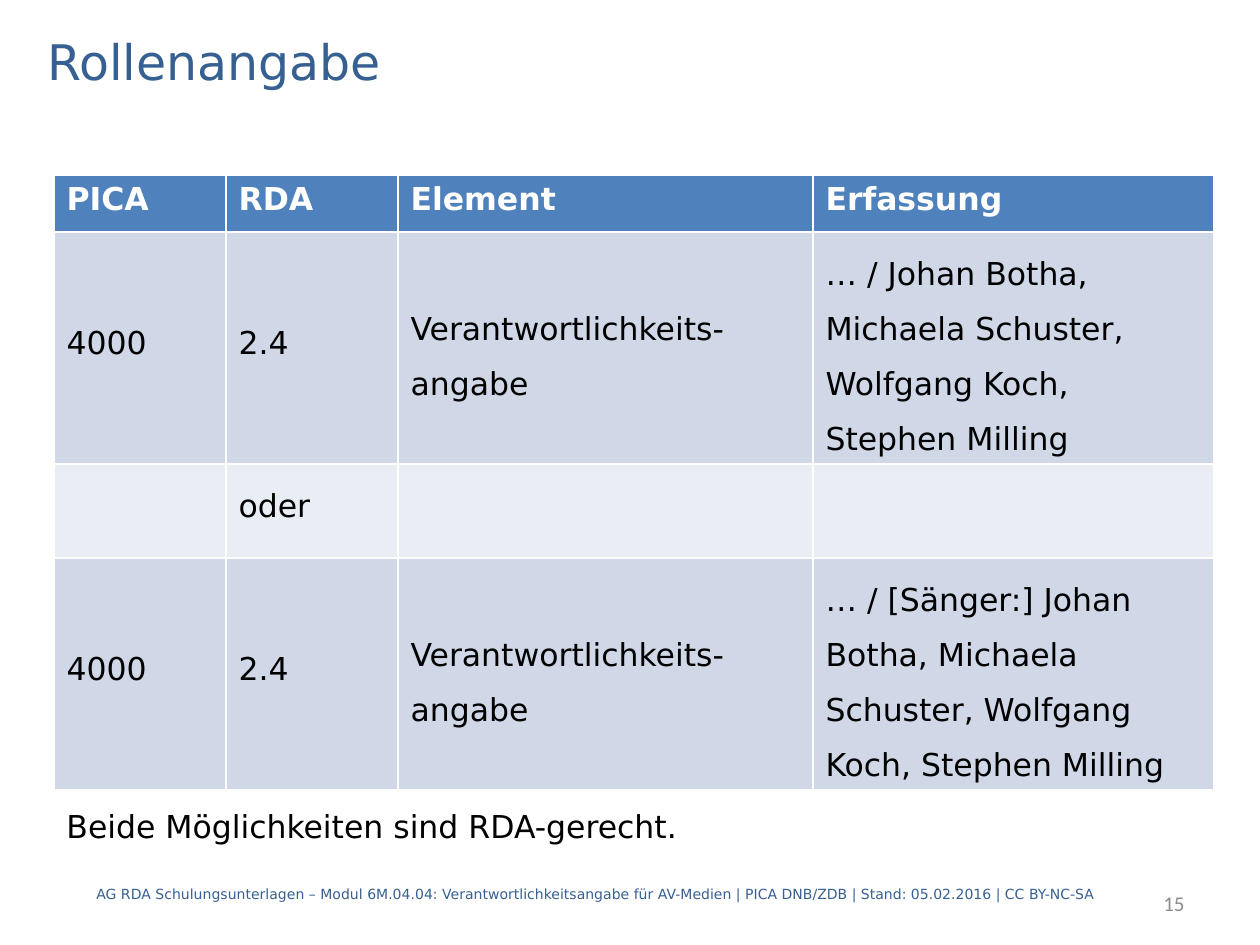
import pptx
import pptx.dml.color
import pptx.enum.text
import pptx.util

PX = 914400 // 126
FONT = "DejaVu Sans"
BLUE = "376092"
LEFT = pptx.enum.text.PP_ALIGN.LEFT
RIGHT = pptx.enum.text.PP_ALIGN.RIGHT
MIDDLE = pptx.enum.text.MSO_ANCHOR.MIDDLE


def color(value):
    return pptx.dml.color.RGBColor.from_string(value)


def write(frame, text, size, ink, font=FONT, align=LEFT):
    """Fill a text frame with one formatted paragraph and return it."""
    frame.word_wrap = True
    frame.text = text
    paragraph = frame.paragraphs[0]
    paragraph.alignment = align
    paragraph.font.name = font
    paragraph.font.size = pptx.util.Pt(size)
    paragraph.font.color.rgb = color(ink)
    return paragraph


presentation = pptx.Presentation()
presentation.slide_width = 1260 * PX
presentation.slide_height = 945 * PX
slide = presentation.slides.add_slide(presentation.slide_layouts[5])

# Title
title = slide.shapes.title
title.left, title.top, title.width, title.height = (n * PX for n in (35, 25, 1191, 71))
title.text_frame.auto_size = pptx.enum.text.MSO_AUTO_SIZE.NONE
title.text_frame.vertical_anchor = MIDDLE
write(title.text_frame, "Rollenangabe", 28, BLUE)

# Table
element = "Verantwortlichkeits-angabe"
rows = [
    ["PICA", "RDA", "Element", "Erfassung"],
    ["4000", "2.4", element,
     "… / Johan Botha, Michaela Schuster, Wolfgang Koch, Stephen Milling"],
    ["", "oder", "", ""],
    ["4000", "2.4", element,
     "… / [Sänger:] Johan Botha, Michaela Schuster, Wolfgang Koch, Stephen Milling"],
]
column_widths = [172, 172, 415, 401]
row_heights = [57, 232, 94, 232]
row_fills = ["4F81BD", "D0D8E8", "E9EDF4", "D0D8E8"]

table = slide.shapes.add_table(
    len(rows), len(column_widths), 54 * PX, 175 * PX,
    sum(column_widths) * PX, sum(row_heights) * PX).table
for column, width in zip(table.columns, column_widths):
    column.width = width * PX
for row, height in zip(table.rows, row_heights):
    row.height = height * PX

for r, texts in enumerate(rows):
    for c, text in enumerate(texts):
        cell = table.cell(r, c)
        cell.fill.solid()
        cell.fill.fore_color.rgb = color(row_fills[r])
        if not text:
            continue
        paragraph = write(cell.text_frame, text, 18, "000000" if r else "FFFFFF")
        paragraph.font.bold = r == 0
        if r:
            cell.vertical_anchor = MIDDLE
            paragraph.line_spacing = pptx.util.Pt(16) if c < 2 else 1.5
            paragraph.space_before = paragraph.space_after = pptx.util.Pt(6)

# Remark, footer and slide number
footer = ("AG RDA Schulungsunterlagen – Modul 6M.04.04: Verantwortlichkeitsangabe für "
          "AV-Medien | PICA DNB/ZDB | Stand: 05.02.2016 | CC BY-NC-SA")
for box, text, size, ink, font, align in [
    ((54, 790, 1191, 71), "Beide Möglichkeiten sind RDA-gerecht.", 18, "000000", FONT, LEFT),
    ((84, 869, 1101, 50), footer, 8, BLUE, FONT, LEFT),
    ((997, 878, 200, 50), "15", 12, "8C8C8C", "Calibri", RIGHT),
]:
    frame = slide.shapes.add_textbox(*(n * PX for n in box)).text_frame
    frame.vertical_anchor = MIDDLE
    write(frame, text, size, ink, font, align)

presentation.save("out.pptx")
